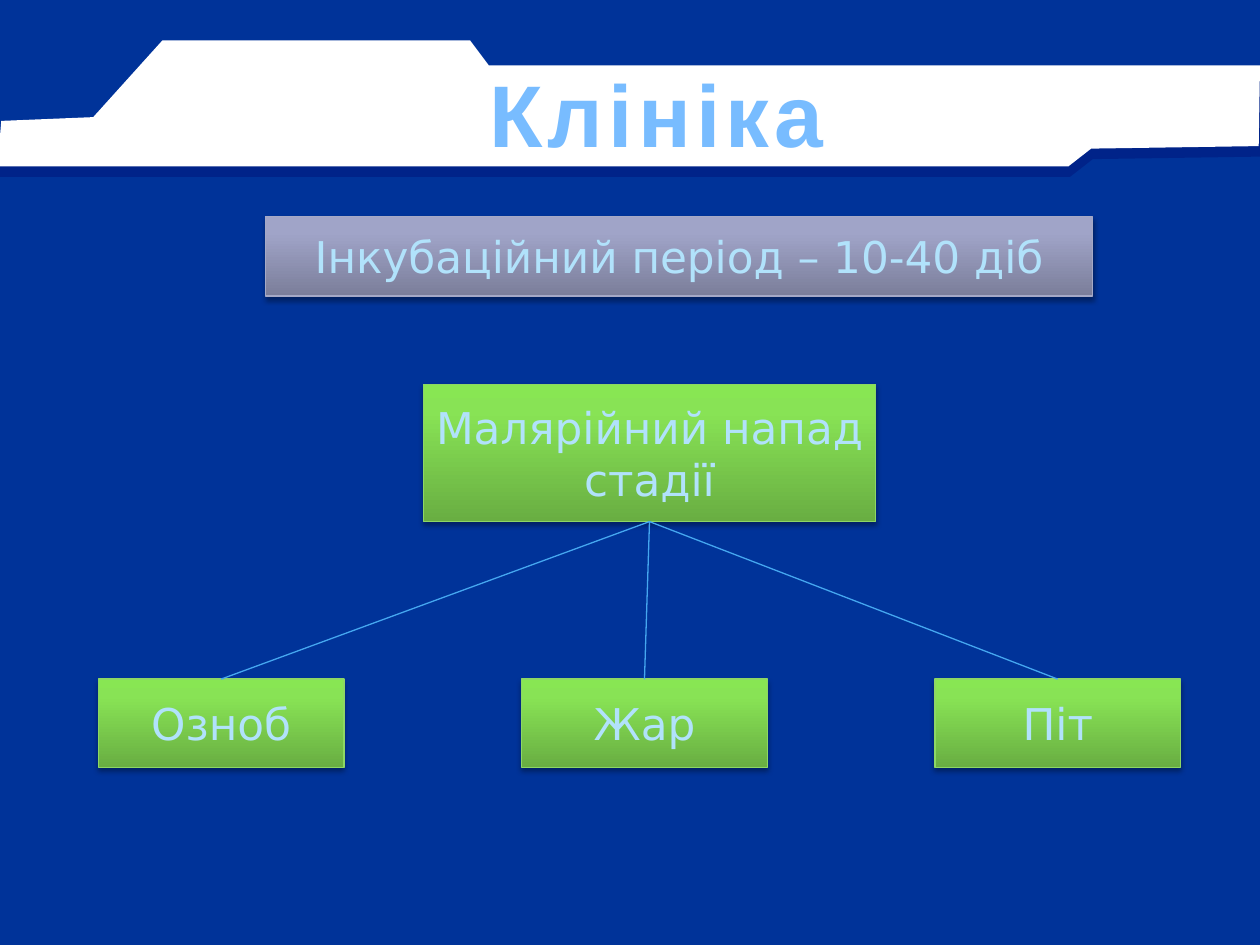
"""Build the slide on the clinical course of malaria."""
from lxml import etree
from pptx import Presentation
from pptx import util as u
from pptx.dml.color import RGBColor
from pptx.enum import shapes, text
from pptx.oxml.ns import nsdecls, qn
from pptx.oxml import parse_xml

TITLE = "Клініка"
TITLE_AT = (1.17, 0.58, 8.08, 0.62)
PERIOD = ("Інкубаційний період – 10-40 діб", (2.11, 1.72, 6.56, 0.63))
ATTACK = ("Малярійний напад\nстадії", (3.36, 3.05, 3.59, 1.09))
STAGES = [("Озноб", 0.78), ("Жар", 4.14), ("Піт", 7.42)]
STAGE_TOP, STAGE_W, STAGE_H = 5.39, 1.95, 0.7
BANNER = [(0.74, 0.93), (1.29, 0.32), (3.73, 0.32), (3.88, 0.52), (10, 0.52),
          (9.99, 1.16), (8.66, 1.18), (8.48, 1.32), (-0.02, 1.32), (0.01, 0.96)]

GREY = ([(0, "7B7E9A"), (80, "A0A4C8"), (100, "A0A4CA")], "A5A9C6")
GREEN = ([(0, "69AE42"), (80, "88E355"), (100, "88E653")], "8DD764")
TITLE_STOPS = [(10, "78BCFF"), (75, "1982D1")]


def rgb(value):
    return RGBColor.from_string(value)


def gradient(stops, angle):
    marks = "".join(f'<a:gs pos="{pos * 1000}"><a:srgbClr val="{c}"/></a:gs>' for pos, c in stops)
    return parse_xml(f'<a:gradFill {nsdecls("a")} rotWithShape="1"><a:gsLst>{marks}</a:gsLst>'
                     f'<a:lin ang="{angle * 60000}" scaled="0"/></a:gradFill>')


def add_shadow(sp, color, alpha, blur, dist, angle):
    sp.shadow.inherit = False
    effects = sp._element.spPr.find(qn("a:effectLst"))
    effects.append(parse_xml(
        f'<a:outerShdw {nsdecls("a")} blurRad="{u.Pt(blur)}" dist="{u.Pt(dist)}" '
        f'dir="{angle * 60000}" algn="ctr" rotWithShape="0"><a:srgbClr val="{color}">'
        f'<a:alpha val="{alpha * 1000}"/></a:srgbClr></a:outerShdw>'))


def add_banner(slide):
    points = [(u.Inches(x), u.Inches(y)) for x, y in BANNER]
    builder = slide.shapes.build_freeform(*points[0])
    builder.add_line_segments(points[1:], close=True)
    sp = builder.convert_to_shape()
    sp.fill.solid()
    sp.fill.fore_color.rgb = rgb("FFFFFF")
    sp.line.fill.background()
    add_shadow(sp, "000066", 30, 0, 6.1, 81)
    slide.shapes._spTree.insert(2, sp._element)


def add_title(slide):
    sp = slide.shapes.title
    sp.left, sp.top, sp.width, sp.height = map(u.Inches, TITLE_AT)
    tf = sp.text_frame
    tf.text = TITLE
    tf.word_wrap = True
    tf.auto_size = text.MSO_AUTO_SIZE.NONE
    tf.vertical_anchor = text.MSO_ANCHOR.MIDDLE
    p = tf.paragraphs[0]
    p.alignment = text.PP_ALIGN.CENTER
    r = p.runs[0]
    r.font.size, r.font.bold, r.font.name = u.Pt(50), True, "Arial"
    props = r.font._element
    props.set("spc", "300")
    outline = parse_xml(f'<a:ln {nsdecls("a")} w="{u.Pt(0.9)}"><a:solidFill>'
                        '<a:srgbClr val="F4F8FE"/></a:solidFill></a:ln>')
    props.insert(0, outline)
    props.insert(1, gradient(TITLE_STOPS, 90))


def add_box(slide, label, at, style):
    stops, edge = style
    sp = slide.shapes.add_shape(shapes.MSO_SHAPE.RECTANGLE, *map(u.Inches, at))
    sp.fill.gradient()
    props = sp._element.spPr
    props.replace(props.find(qn("a:gradFill")), gradient(stops, 270))
    sp.line.color.rgb = rgb(edge)
    sp.line.width = u.Pt(0.75)
    add_shadow(sp, "000000", 35, 3.1, 1.8, 90)
    tf = sp.text_frame
    tf.word_wrap = True
    tf.vertical_anchor = text.MSO_ANCHOR.MIDDLE
    tf.text = label
    for p in tf.paragraphs:
        p.alignment = text.PP_ALIGN.CENTER
        p.font.size, p.font.name = u.Pt(25), "DejaVu Sans"
        p.font.color.rgb = rgb("B1E2FB")
    return sp


def join(slide, parent, child):
    line = slide.shapes.add_connector(shapes.MSO_CONNECTOR.STRAIGHT, 0, 0, 0, 0)
    line.begin_connect(parent, 2)
    line.end_connect(child, 0)
    line.line.color.rgb = rgb("45A7F0")
    line.line.width = u.Pt(0.75)
    etree.SubElement(line._element.spPr, qn("a:effectLst"))


def main():
    prs = Presentation()
    prs.slide_width, prs.slide_height = u.Inches(10), u.Inches(7.5)
    slide = prs.slides.add_slide(prs.slide_layouts[5])
    slide.background.fill.solid()
    slide.background.fill.fore_color.rgb = rgb("003399")
    add_banner(slide)
    add_title(slide)
    add_box(slide, *PERIOD, GREY)
    attack = add_box(slide, *ATTACK, GREEN)
    stages = [add_box(slide, label, (left, STAGE_TOP, STAGE_W, STAGE_H), GREEN)
              for label, left in STAGES]
    for stage in stages:
        join(slide, attack, stage)
    prs.save("out.pptx")


if __name__ == "__main__":
    main()
